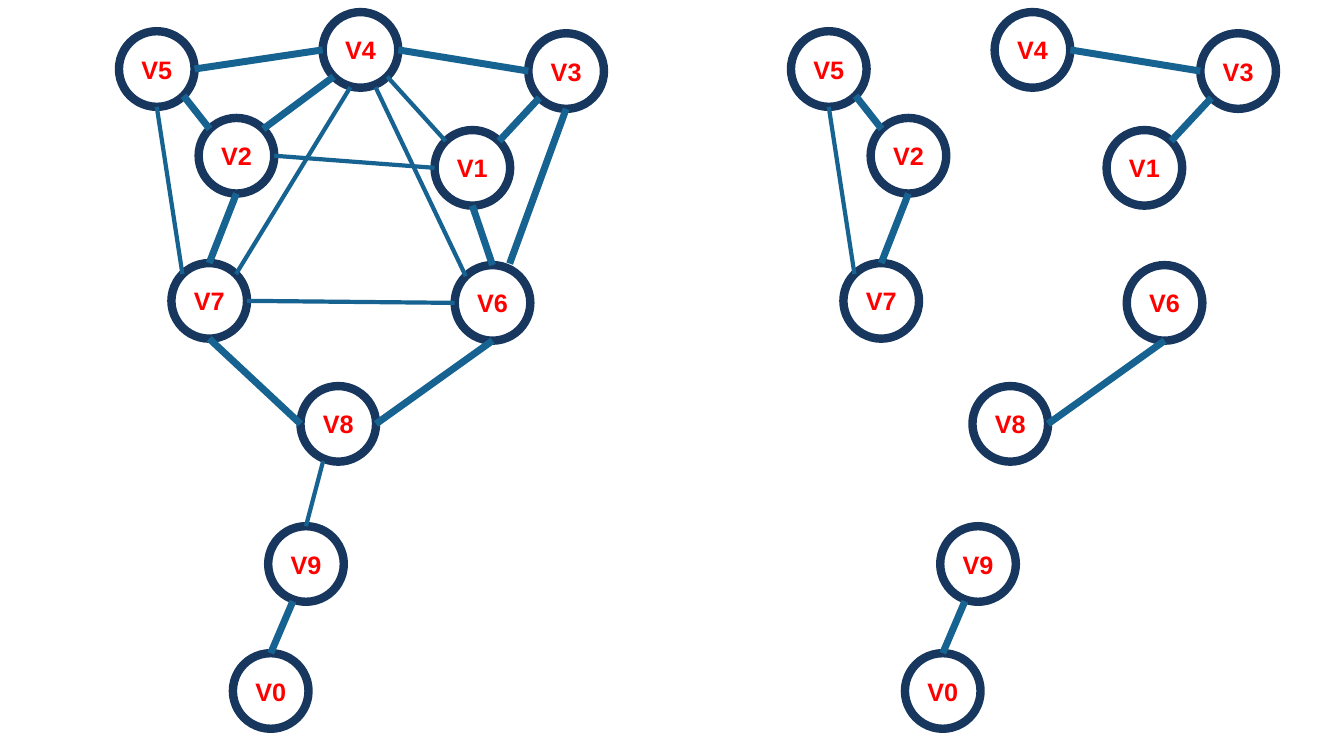
from math import cos, radians, sin

from pptx import Presentation
from pptx.dml.color import RGBColor
from pptx.enum.shapes import MSO_CONNECTOR, MSO_SHAPE
from pptx.enum.text import MSO_ANCHOR, PP_ALIGN
from pptx.oxml.ns import qn
from pptx.util import Inches, Pt

WIDE, HIGH = 13.33, 7.5
SIZE = 0.75
NAVY = RGBColor(0x17, 0x37, 0x5E)
TEAL = RGBColor(0x16, 0x63, 0x91)
RED = RGBColor(0xFF, 0x00, 0x00)

# Left and top of each vertex, in inches within a graph
NODES = {
    "V5": (1.18, 0.31), "V2": (1.97, 1.17), "V6": (4.51, 2.63),
    "V4": (3.2, 0.12), "V7": (1.7, 2.61), "V0": (2.31, 6.48),
    "V1": (4.31, 1.29), "V9": (2.66, 5.22), "V8": (2.98, 3.83),
    "V3": (5.24, 0.33),
}

# Edges: vertex and port at each end, then weight in points.
# A port is a compass point on the rim or an offset from the centre.
EDGES = [
    ("V5", "E", "V4", "W", 5),
    ("V4", "E", "V3", "W", 5),
    ("V2", "NE", "V4", "SW", 5),
    ("V4", "SE", "V1", "NW", 3),
    ("V7", "N", "V2", "S", 5),
    ("V1", "S", "V6", "N", 5),
    ("V7", "NW", "V5", "S", 3),
    ("V3", "S", "V6", (0.17, -0.39), 5),
    ("V7", "NE", "V4", (-0.1, 0.37), 3),
    ("V6", "NW", "V4", (0.15, 0.37), 3),
    ("V8", "W", "V7", "S", 5),
    ("V8", "E", "V6", "S", 5),
    ("V9", "N", "V8", (-0.15, 0.37), 3),
    ("V0", "N", "V9", (-0.13, 0.37), 5),
    ("V7", "E", "V6", "W", 3),
    ("V2", "E", "V1", "W", 3),
    ("V5", "SE", "V2", "NW", 5),
    ("V3", "SW", "V1", "NE", 5),
]

# Edges left in the right-hand graph
KEPT = {("V4", "V3"), ("V7", "V2"), ("V7", "V5"), ("V8", "V6"),
        ("V0", "V9"), ("V5", "V2"), ("V3", "V1")}
SPLIT = [edge for edge in EDGES if (edge[0], edge[2]) in KEPT]
GRAPHS = [(0, EDGES), (WIDE / 2, SPLIT)]

COMPASS = ["E", "SE", "S", "SW", "W", "NW", "N", "NE"]
PORTS = {
    name: (SIZE / 2 * cos(radians(45 * i)), SIZE / 2 * sin(radians(45 * i)))
    for i, name in enumerate(COMPASS)
}


def locate(node, port, shift):
    left, top = NODES[node]
    dx, dy = PORTS[port] if isinstance(port, str) else port
    return Inches(shift + left + SIZE / 2 + dx), Inches(top + SIZE / 2 + dy)


def add_node(group, name, shift):
    left, top = NODES[name]
    disc = group.shapes.add_shape(
        MSO_SHAPE.OVAL, Inches(shift + left), Inches(top),
        Inches(SIZE), Inches(SIZE))
    disc.shadow.inherit = False
    disc.fill.background()
    disc.line.color.rgb = NAVY
    disc.line.width = Pt(6)
    frame = disc.text_frame
    frame.margin_left = frame.margin_right = 0
    frame.word_wrap = False
    frame.vertical_anchor = MSO_ANCHOR.MIDDLE
    para = frame.paragraphs[0]
    para.text = name
    para.alignment = PP_ALIGN.CENTER
    font = para.font
    font.name, font.size, font.bold = "Arial", Pt(18), True
    font.color.rgb = RED


def add_edge(group, edge, shift):
    start, out, end, into, weight = edge
    line = group.shapes.add_connector(
        MSO_CONNECTOR.STRAIGHT,
        *locate(start, out, shift), *locate(end, into, shift))
    line.line.color.rgb = TEAL
    line.line.width = Pt(weight)
    props = line._element.spPr
    props.append(props.makeelement(qn("a:effectLst"), {}))


deck = Presentation()
deck.slide_width, deck.slide_height = Inches(WIDE), Inches(HIGH)
slide = deck.slides.add_slide(deck.slide_layouts[6])

# One group for each graph, vertices behind edges
for shift, edges in GRAPHS:
    group = slide.shapes.add_group_shape()
    for name in NODES:
        add_node(group, name, shift)
    for edge in edges:
        add_edge(group, edge, shift)

deck.save("out.pptx")
